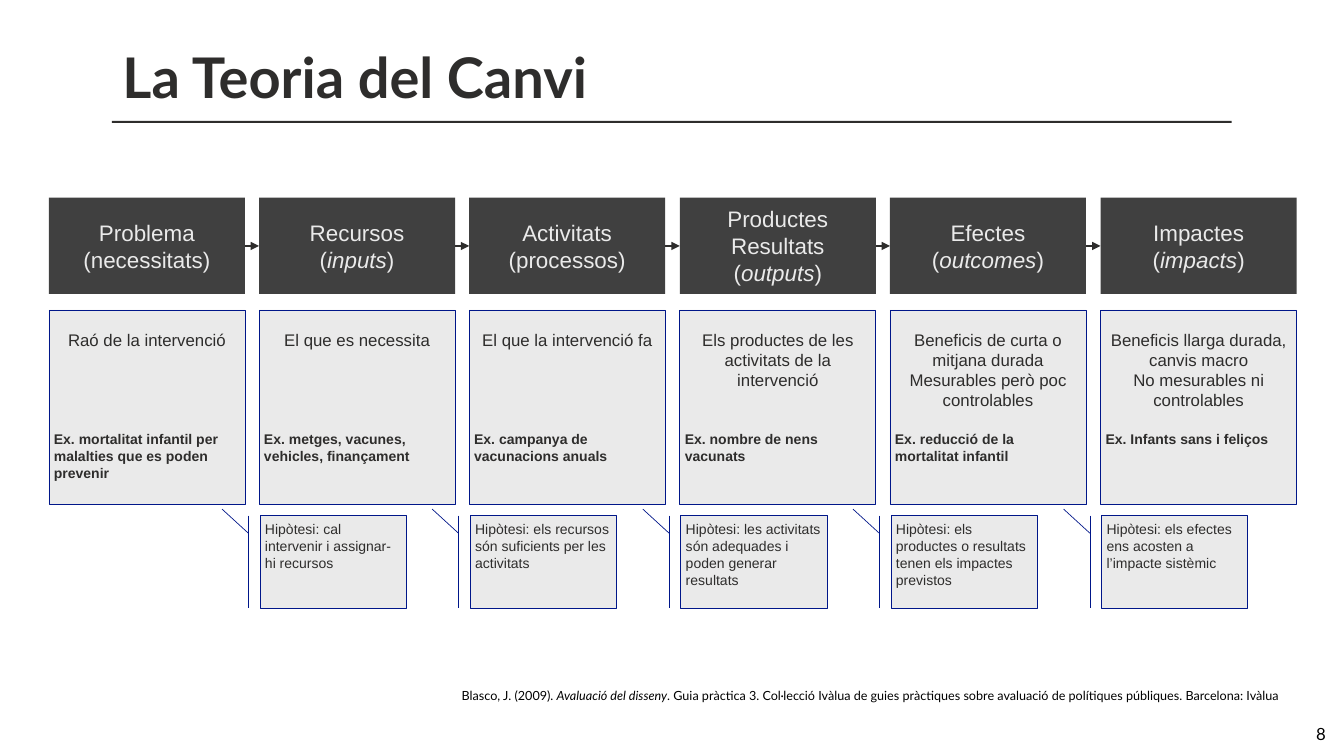
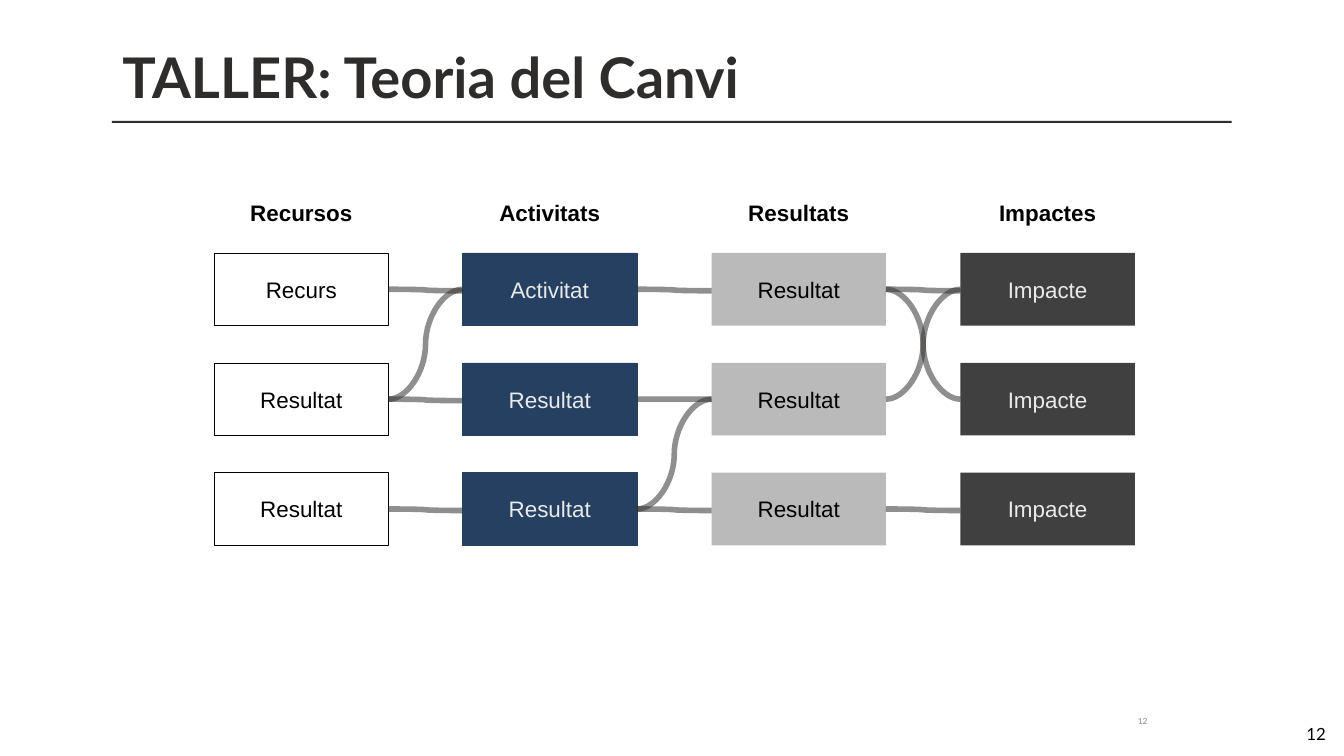
"""Build two slides on the theory of change: the logic chain and a workshop diagram."""
from dataclasses import dataclass

from lxml import etree
from pptx import Presentation
from pptx.dml.color import RGBColor
from pptx.enum.shapes import MSO_CONNECTOR, MSO_SHAPE
from pptx.enum.text import MSO_ANCHOR, PP_ALIGN
from pptx.oxml.ns import qn
from pptx.util import Emu, Pt

PX = 9144
RECTANGLE = MSO_SHAPE.RECTANGLE
CALLOUT = MSO_SHAPE.LINE_CALLOUT_1_BORDER_AND_ACCENT_BAR
STRAIGHT = MSO_CONNECTOR.STRAIGHT
CURVE = MSO_CONNECTOR.CURVE
TOP = MSO_ANCHOR.TOP
MIDDLE = MSO_ANCHOR.MIDDLE
LEFT = PP_ALIGN.LEFT
CENTER = PP_ALIGN.CENTER
RIGHT = PP_ALIGN.RIGHT


@dataclass(frozen=True)
class Theme:
    """Colours, fonts and type sizes shared by the slides."""
    ink: str = "2E2D2C"
    black: str = "000000"
    white: str = "FFFFFF"
    dark: str = "404040"
    pale: str = "EAEAEA"
    grey: str = "BABABA"
    muted: str = "8C8C8C"
    navy: str = "254061"
    outline: str = "001689"
    heading_font: str = "Lato"
    body_font: str = "Arial"
    title: int = 80
    label: int = 32
    body: int = 24
    example: int = 20
    citation: int = 18
    small: int = 12
    body_line: int = 29


THEME = Theme()

STAGES = [
    (["Problema", "(necessitats)"], ["Raó de la intervenció"], 1,
     "Ex. mortalitat infantil per malalties que es poden prevenir", None),
    (["Recursos", "(*inputs*)"], ["El que es necessita"], 1,
     "Ex. metges, vacunes, vehicles, finançament",
     "Hipòtesi: cal intervenir i assignar-hi recursos"),
    (["Activitats", "(processos)"], ["El que la intervenció fa"], 1,
     "Ex. campanya de vacunacions anuals",
     "Hipòtesi: els recursos són suficients per les activitats"),
    (["Productes", "Resultats", "(*outputs*)"],
     ["Els productes de les activitats de la intervenció"], 3,
     "Ex. nombre de nens vacunats",
     "Hipòtesi: les activitats són adequades i poden generar resultats"),
    (["Efectes (*outcomes*)"],
     ["Beneficis de curta o mitjana durada", "Mesurables però poc controlables"], 4,
     "Ex. reducció de la mortalitat infantil",
     "Hipòtesi: els productes o resultats tenen els impactes previstos"),
    (["Impactes", "(*impacts*)"],
     ["Beneficis llarga durada, canvis macro", "No mesurables ni controlables"], 4,
     "Ex. Infants sans i feliços",
     "Hipòtesi: els efectes ens acosten a l’impacte sistèmic"),
]

WORKSHOP = [
    ("Recursos", ["Recurs", "Resultat", "Resultat"], None, THEME.black, THEME.black),
    ("Activitats", ["Activitat", "Resultat", "Resultat"], THEME.navy, THEME.navy, THEME.pale),
    ("Resultats", ["Resultat"] * 3, THEME.grey, None, THEME.black),
    ("Impactes", ["Impacte"] * 3, THEME.dark, None, THEME.pale),
]

LINKS = [
    (0, 0, 0, 3), (0, 1, 0, 0), (0, 1, 1, 3), (0, 2, 2, 3),
    (1, 0, 0, 3), (1, 1, 1, 0), (1, 2, 1, 0), (1, 2, 2, 3),
    (2, 0, 0, 3), (2, 0, 1, 0), (2, 1, 0, 0), (2, 2, 2, 3),
]


def color(value):
    """Turn a hex string into a colour."""
    return RGBColor.from_string(value)


def place(*lengths):
    """Turn px into EMU."""
    return [Emu(length * PX) for length in lengths]


def set_frame(shape, anchor=TOP, insets=(10, 5, 10, 5), wrap=True):
    """Set the anchor, insets and wrapping of a text frame."""
    frame = shape.text_frame
    frame.word_wrap = wrap
    frame.vertical_anchor = anchor
    (frame.margin_left, frame.margin_top,
     frame.margin_right, frame.margin_bottom) = place(*insets)


def write(shape, lines, size, ink, align=LEFT, font=THEME.body_font, bold=False, before=0):
    """Append paragraphs; text between asterisks is italic."""
    frame = shape.text_frame
    for line in lines:
        first = frame.paragraphs[0]
        paragraph = frame.add_paragraph() if first.runs else first
        paragraph.alignment = align
        if before:
            paragraph.space_before = Pt(before)
        paragraph.font.name = font
        paragraph.font.size = Pt(size)
        paragraph.font.bold = bold
        paragraph.font.color.rgb = color(ink)
        for index, piece in enumerate(line.split("*")):
            if piece:
                run = paragraph.add_run()
                run.text = piece
                if index % 2:
                    run.font.italic = True


def add_box(slide, box, fill=None, line=None, kind=RECTANGLE):
    """Add a preset shape with an optional fill and outline."""
    shape = slide.shapes.add_shape(kind, *place(*box))
    shape.shadow.inherit = False
    if fill:
        shape.fill.solid()
        shape.fill.fore_color.rgb = color(fill)
    else:
        shape.fill.background()
    if line:
        shape.line.color.rgb = color(line)
        shape.line.width = Pt(1)
    else:
        shape.line.fill.background()
    return shape


def add_text(slide, box, text, size, ink, align, font=THEME.body_font, bold=False, **frame):
    """Add a text box with one paragraph."""
    shape = slide.shapes.add_textbox(*place(*box))
    set_frame(shape, **frame)
    write(shape, [text], size, ink, align, font, bold)


def add_line(slide, kind, ends, width):
    """Add a connector and return its line element."""
    connector = slide.shapes.add_connector(kind, *place(*ends))
    connector.line.color.rgb = color(THEME.ink)
    connector.line.width = Pt(width)
    line = connector.line._get_or_add_ln()
    etree.SubElement(connector._element.spPr, qn("a:effectLst"))
    return line


def add_arrow(slide, start, end, y):
    """Add a short arrow with its head at the start."""
    line = add_line(slide, STRAIGHT, (start, y, end, y), 4)
    etree.SubElement(line, qn("a:headEnd"), type="triangle")


def add_link(slide, ends):
    """Add a thick translucent curve."""
    line = add_line(slide, CURVE, ends, 8)
    etree.SubElement(line.find(".//" + qn("a:srgbClr")), qn("a:alpha"), val="52000")


def add_base(presentation, title, number):
    """Add a slide with its title, rule and page number."""
    slide = presentation.slides.add_slide(presentation.slide_layouts[6])
    add_box(slide, (222, 240, 2222, 4), THEME.ink)
    add_text(slide, (2341, 1435, 300, 40), number, THEME.body, THEME.black, RIGHT,
             THEME.heading_font, anchor=MIDDLE, insets=(10, 10, 10, 10), wrap=False)
    add_box(slide, (-1, 2, 2667, 228), THEME.white)
    add_text(slide, (223, 73, 2222, 157), title, THEME.title, THEME.ink, LEFT,
             THEME.heading_font, True, anchor=MIDDLE, insets=(20, 10, 20, 10))
    return slide


def add_label(slide, box, lines, fill, line, ink):
    """Add a box with large centred text."""
    shape = add_box(slide, box, fill, line)
    set_frame(shape, MIDDLE)
    write(shape, lines, THEME.label, ink, CENTER)


def add_description(slide, box, lines, line_count, example):
    """Add a stage description with its example starting below the fifth line."""
    shape = add_box(slide, box, THEME.pale, THEME.outline)
    set_frame(shape, TOP, (10, 39, 10, 5))
    write(shape, lines, THEME.body, THEME.ink, CENTER)
    write(shape, [example], THEME.example, THEME.ink, bold=True,
          before=(5 - line_count) * THEME.body_line)


def add_hypothesis(slide, box, text):
    """Add a callout pointing back to the gap between two stages."""
    shape = add_box(slide, box, THEME.pale, THEME.outline, CALLOUT)
    for index, value in enumerate((0.19, -0.08, -0.07, -0.26)):
        shape.adjustments[index] = value
    set_frame(shape, TOP, (10, 10, 10, 5))
    write(shape, [text], THEME.example, THEME.ink)


def build_chain(presentation):
    """Build the six-stage chain."""
    slide = add_base(presentation, "La Teoria del Canvi", "8")
    add_text(slide, (564, 1361, 1984, 40),
             "Blasco, J. (2009). *Avaluació del disseny*. Guia pràctica 3. Col·lecció Ivàlua "
             "de guies pràctiques sobre avaluació de polítiques públiques. Barcelona: Ivàlua",
             THEME.citation, THEME.black, RIGHT, THEME.heading_font)
    width = 389
    columns = [97 + index * 2087 // 5 for index in range(len(STAGES))]
    for previous, left in zip(columns, columns[1:]):
        add_arrow(slide, left, previous + width, 488)
    for left, (name, lines, line_count, example, hypothesis) in zip(columns, STAGES):
        add_label(slide, (left, 392, width, 191), name, THEME.dark, None, THEME.pale)
        add_description(slide, (left, 615, width, 386), lines, line_count, example)
        if hypothesis:
            add_hypothesis(slide, (left + 2, 1023, 290, 184), hypothesis)


def build_workshop(presentation):
    """Build the linked workshop grid."""
    slide = add_base(presentation, "TALLER: Teoria del Canvi", "12")
    add_text(slide, (2233, 1402, 54, 57), "12", THEME.small, THEME.muted, RIGHT,
             THEME.heading_font, anchor=MIDDLE)
    width, height = 346, 144
    columns = [425 + index * 1481 // 3 for index in range(len(WORKSHOP))]
    rows = [502 + index * 218 for index in range(3)]
    for left, (heading, labels, fill, line, ink) in zip(columns, WORKSHOP):
        add_text(slide, (left, 380, width, 85), heading, THEME.label, THEME.black, CENTER,
                 bold=True, anchor=MIDDLE, insets=(43, 34, 43, 34), wrap=False)
        for top, label in zip(rows, labels):
            add_label(slide, (left, top, width, height), [label], fill, line, ink)
    for column, source, target, drop in LINKS:
        add_link(slide, (columns[column + 1], rows[target] + height // 2 + drop,
                         columns[column] + width, rows[source] + height // 2))


def main():
    """Build and save the presentation."""
    presentation = Presentation()
    presentation.slide_width, presentation.slide_height = place(2667, 1500)
    build_chain(presentation)
    build_workshop(presentation)
    presentation.save("out.pptx")


if __name__ == "__main__":
    main()
